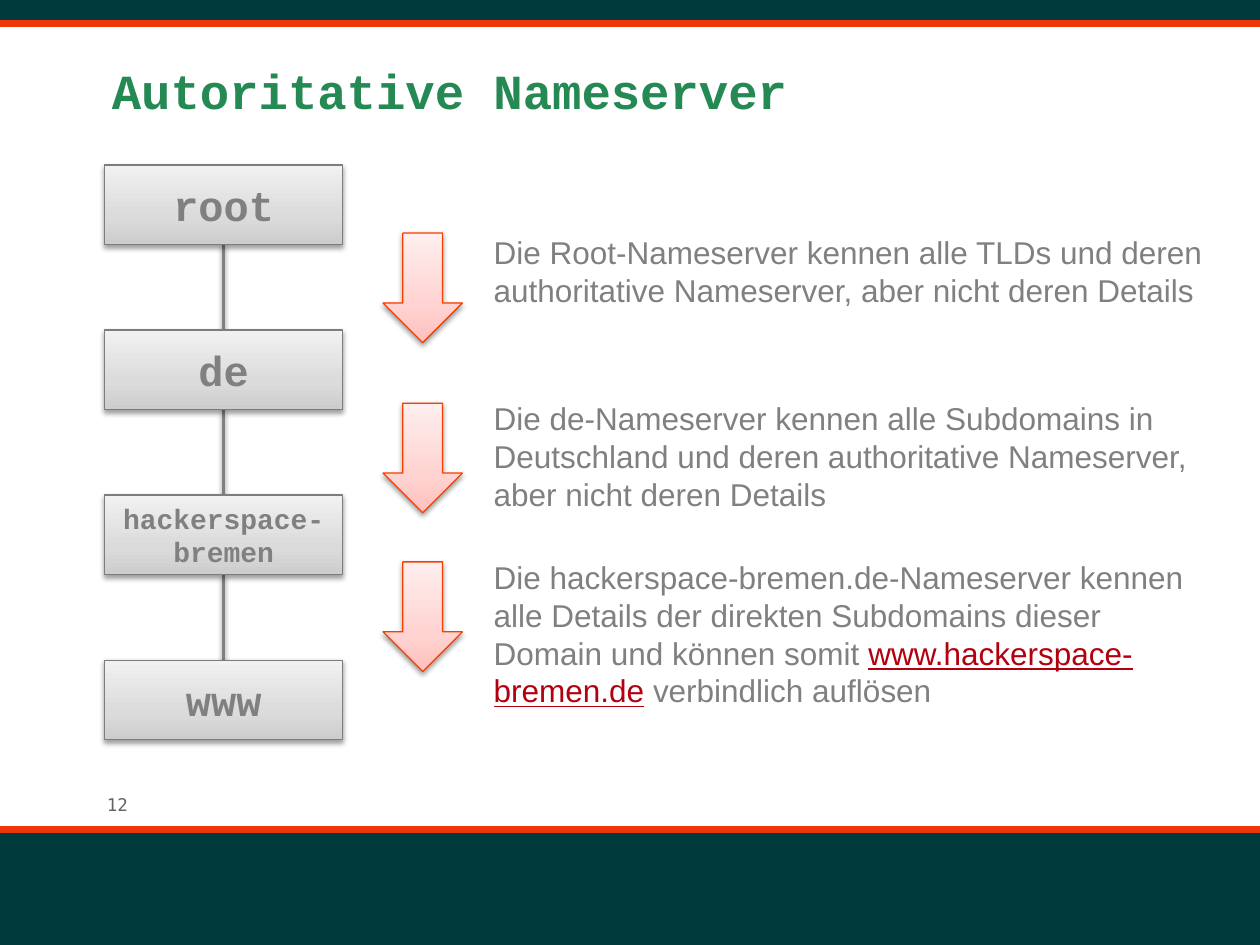
import dataclasses

import pptx
import pptx.dml.color
import pptx.enum.shapes
import pptx.enum.text
import pptx.oxml
import pptx.oxml.ns
import pptx.util

SHAPES = pptx.enum.shapes.MSO_SHAPE
NAMESPACE = pptx.oxml.ns.nsdecls("a")


@dataclasses.dataclass(frozen=True)
class Theme:
    band: str = "003A3D"
    stripe: str = "EE3709"
    title: str = "258954"
    text: str = "808080"
    link: str = "B3000F"
    number: str = "646464"
    node_line: str = "7D7D7D"
    arrow_line: str = "F93F00"
    node_stops: tuple = ((0, "CDCDCD"), (35, "DBDBDB"), (100, "F1F1F1"))
    arrow_stops: tuple = ((0, "FFC0BD"), (35, "FFD3D1"), (100, "FFEEEE"))
    mono: str = "Courier New"
    sans: str = "Arial"
    number_font: str = "DejaVu Sans Mono"
    title_size: int = 28
    node_size: int = 24
    small_node_size: int = 16
    body_size: int = 18
    number_size: int = 10
    hairline: float = 0.75
    connector: float = 2
    stripe_width: float = 4


class SlideBuilder:
    """Places elements on a grid of 100 columns by 75 rows."""

    def __init__(self, deck, theme):
        self.theme = theme
        self.column = deck.slide_width / 100
        self.row = deck.slide_height / 75
        self.page = deck.slides.add_slide(deck.slide_layouts[6])

    def place(self, left, top, width, height):
        return (round(left * self.column), round(top * self.row),
                round(width * self.column), round(height * self.row))

    def color(self, value):
        return pptx.dml.color.RGBColor.from_string(value)

    def add_effects(self, shape, shadow):
        inner = ('<a:outerShdw blurRad="39370" dist="20320" dir="5400000" rotWithShape="0">'
                 '<a:srgbClr val="000000"><a:alpha val="38000"/></a:srgbClr>'
                 '</a:outerShdw>') if shadow else ""
        shape.element.spPr.append(pptx.oxml.parse_xml(
            f"<a:effectLst {NAMESPACE}>{inner}</a:effectLst>"))

    def style_span(self, span, font, size, color, bold=False, underline=False):
        span.font.name = font
        span.font.size = pptx.util.Pt(size)
        span.font.bold = bold
        span.font.underline = underline
        span.font.color.rgb = self.color(color)

    def line(self, start, end, color, width, shadow=False):
        line = self.page.shapes.add_connector(
            pptx.enum.shapes.MSO_CONNECTOR.STRAIGHT, *self.place(*start, *end))
        line.line.color.rgb = self.color(color)
        line.line.width = pptx.util.Pt(width)
        self.add_effects(line, shadow)

    def band(self, top, height):
        band = self.page.shapes.add_shape(SHAPES.RECTANGLE, *self.place(0, top, 100, height))
        band.fill.solid()
        band.fill.fore_color.rgb = self.color(self.theme.band)
        band.line.color.rgb = self.color(self.theme.band)
        band.line.width = pptx.util.Pt(self.theme.hairline)
        band.shadow.inherit = False

    def gradient_shape(self, kind, area, stops, outline):
        shape = self.page.shapes.add_shape(kind, *self.place(*area))
        shape.fill.gradient()
        shape.fill.gradient_angle = 90
        stop_list = shape.element.spPr.find(".//" + pptx.oxml.ns.qn("a:gsLst"))
        stop_list.clear()
        for share, color in stops:
            stop_list.append(pptx.oxml.parse_xml(
                f'<a:gs {NAMESPACE} pos="{share * 1000}"><a:srgbClr val="{color}"/></a:gs>'))
        shape.line.color.rgb = self.color(outline)
        shape.line.width = pptx.util.Pt(self.theme.hairline)
        self.add_effects(shape, shadow=True)
        return shape

    def node(self, area, label, size):
        box = self.gradient_shape(SHAPES.RECTANGLE, area,
                                  self.theme.node_stops, self.theme.node_line)
        frame = box.text_frame
        frame.word_wrap = True
        frame.vertical_anchor = pptx.enum.text.MSO_ANCHOR.MIDDLE
        para = frame.paragraphs[0]
        para.text = label
        para.alignment = pptx.enum.text.PP_ALIGN.CENTER
        for span in para.runs:
            self.style_span(span, self.theme.mono, size, self.theme.text, bold=True)

    def arrow(self, area):
        self.gradient_shape(SHAPES.DOWN_ARROW, area,
                            self.theme.arrow_stops, self.theme.arrow_line)

    def text(self, area, parts, font, size, color, bold=False):
        """Every second part is set as a link."""
        box = self.page.shapes.add_textbox(*self.place(*area))
        box.text_frame.word_wrap = True
        para = box.text_frame.paragraphs[0]
        for index, part in enumerate(parts):
            is_link = index % 2 == 1
            span = para.add_run()
            span.text = part
            self.style_span(span, font, size, self.theme.link if is_link else color,
                            bold, underline=is_link)


def main():
    deck = pptx.Presentation()
    deck.slide_width = pptx.util.Inches(10)
    deck.slide_height = pptx.util.Inches(7.5)
    theme = Theme()
    slide = SlideBuilder(deck, theme)

    # Page frame: number, bands and stripes
    slide.text((7.5, 62.5, 29.2, 2.7), ["12"],
               theme.number_font, theme.number_size, theme.number)
    for band_top, band_height, stripe in ((65.8, 9.2, 65.8), (0, 1.7, 1.9)):
        slide.band(band_top, band_height)
        slide.line((0, stripe), (100, stripe), theme.stripe, theme.stripe_width)

    # Title
    slide.text((7.9, 4.3, 85, 9.9), ["Autoritative Nameserver"],
               theme.mono, theme.title_size, theme.title, bold=True)

    # Domain hierarchy: evenly spaced boxes joined by lines
    labels = ["root", "de", "hackerspace-\vbremen", "www"]
    left, width, height = 8.3, 18.9, 6.3
    first_top, pitch = 13.1, 13.1
    tops = [first_top + pitch * index for index in range(len(labels))]
    center = left + width / 2
    for upper, lower in zip(tops, tops[1:]):
        slide.line((center, upper + height), (center, lower),
                   theme.text, theme.connector, shadow=True)
    for top, label in zip(tops, labels):
        size = theme.small_node_size if "\v" in label else theme.node_size
        slide.node((left, top, width, height), label, size)

    # Explanations, each with its arrow
    steps = [
        (18.5, 18, 7.1, ["Die Root-Nameserver kennen alle TLDs und deren "
                         "authoritative Nameserver, aber nicht deren Details"]),
        (32, 31.2, 10.1, ["Die de-Nameserver kennen alle Subdomains in Deutschland und "
                          "deren authoritative Nameserver, aber nicht deren Details"]),
        (44.6, 43.8, 13.1, ["Die hackerspace-bremen.de-Nameserver kennen alle Details der "
                            "direkten Subdomains dieser Domain und können somit ",
                            "www.hackerspace-bremen.de", " verbindlich auflösen"]),
    ]
    for arrow_top, text_top, text_height, parts in steps:
        slide.arrow((30.4, arrow_top, 6.3, 8.7))
        slide.text((38.2, text_top, 58.3, text_height), parts,
                   theme.sans, theme.body_size, theme.text)

    deck.save("out.pptx")


if __name__ == "__main__":
    main()
